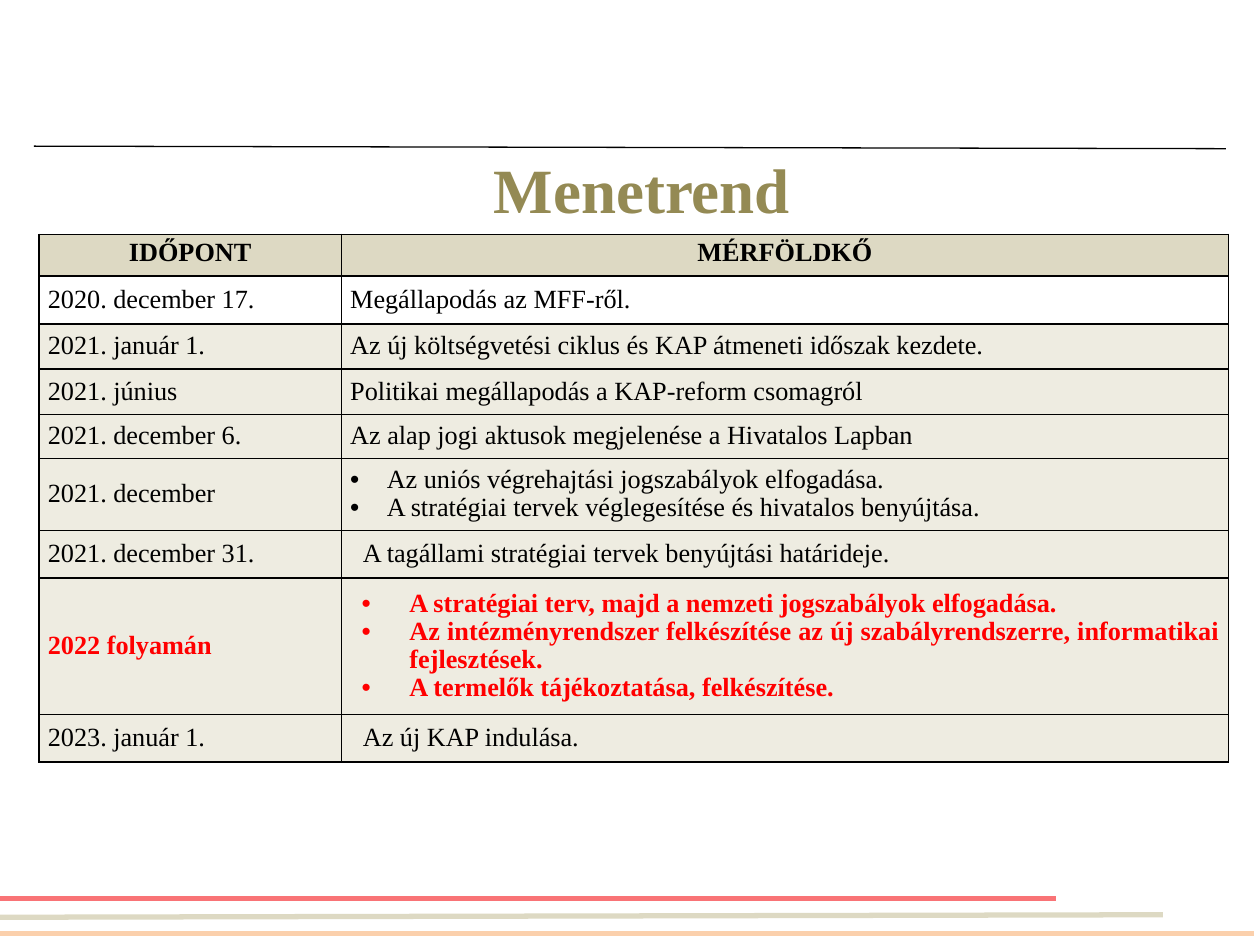
from pptx import Presentation
from pptx.dml.color import RGBColor
from pptx.enum.shapes import MSO_CONNECTOR
from pptx.enum.text import MSO_ANCHOR, PP_ALIGN
from pptx.oxml.ns import qn
from pptx.util import Inches, Pt
from lxml.etree import SubElement

THEME = {
    "font": "Times New Roman", "title_size": 36, "text_size": 15,
    "title": "948A54", "text": "000000", "accent": "FF0000",
    "header_fill": "DDD9C3", "row_fill": "EEECE1", "plain_fill": "FFFFFF",
    "border": "000000", "border_width": 1,
}

TITLE = "Menetrend"
HEADER = ("IDŐPONT", "MÉRFÖLDKŐ")

# Paragraph styles: left indent, first-line indent, bullet
STYLES = {
    "plain": (0, 0, False),
    "indented": (0.1, 0, False),
    "bullets": (0.29, -0.29, True),
    "deep bullets": (0.47, -0.38, True),
}

# Date, milestones, milestone style, row height
MILESTONES = [
    ("2020. december 17.", ["Megállapodás az MFF-ről."], "plain", 0.38),
    ("2021. január 1.", ["Az új költségvetési ciklus és KAP átmeneti időszak kezdete."], "plain", 0.36),
    ("2021. június", ["Politikai megállapodás a KAP-reform csomagról"], "plain", 0.36),
    ("2021. december 6.", ["Az alap jogi aktusok megjelenése a Hivatalos Lapban"], "plain", 0.35),
    ("2021. december", ["Az uniós végrehajtási jogszabályok elfogadása.",
                        "A stratégiai tervek véglegesítése és hivatalos benyújtása."], "bullets", 0.57),
    ("2021. december 31.", ["A tagállami stratégiai tervek benyújtási határideje."], "indented", 0.38),
    ("2022 folyamán", ["A stratégiai terv, majd a nemzeti jogszabályok elfogadása.",
                       "Az intézményrendszer felkészítése az új szabályrendszerre, informatikai fejlesztések.",
                       "A termelők tájékoztatása, felkészítése."], "deep bullets", 1.08),
    ("2023. január 1.", ["Az új KAP indulása."], "indented", 0.38),
]
HIGHLIGHT = "2022 folyamán"
LEFT_ALIGNED = ("2021. június", "2021. december")
HEADER_HEIGHT = 0.33
COLUMNS = (2.4, 7.04)

# Start, end, colour, width in points
RULES = [
    ((0, 7.13), (8.38, 7.13), "F97376", 3),
    ((0, 7.41), (9.95, 7.41), "FBD0AC", 3),
    ((0, 7.28), (9.23, 7.26), "DDD9C3", 3),
    ((0.27, 1.16), (9.73, 1.18), "000000", 0.75),
]


def add_rule(slide, start, end, color, width):
    line = slide.shapes.add_connector(
        MSO_CONNECTOR.STRAIGHT, *(Inches(v) for v in start + end))
    line.line.color.rgb = RGBColor.from_string(color)
    line.line.width = Pt(width)
    SubElement(line._element.spPr, qn("a:effectLst"))


def set_margins(target, left, top, right, bottom):
    target.margin_left, target.margin_top = Inches(left), Inches(top)
    target.margin_right, target.margin_bottom = Inches(right), Inches(bottom)


def add_run(p, text, size, color, bold):
    r = p.add_run()
    r.text = text
    r.font.name, r.font.size, r.font.bold = THEME["font"], Pt(size), bold
    r.font.color.rgb = RGBColor.from_string(color)


def set_borders(cell):
    tcPr = cell._tc.get_or_add_tcPr()
    for i, side in enumerate(("lnL", "lnR", "lnT", "lnB")):
        ln = tcPr.makeelement(qn(f"a:{side}"), {"w": str(Pt(THEME["border_width"]))})
        tcPr.insert(i, ln)
        SubElement(SubElement(ln, qn("a:solidFill")), qn("a:srgbClr"), val=THEME["border"])


def fill_cell(cell, texts, fill, style="plain", align=PP_ALIGN.JUSTIFY,
              color=THEME["text"], bold=False, anchor=MSO_ANCHOR.MIDDLE):
    cell.fill.solid()
    cell.fill.fore_color.rgb = RGBColor.from_string(fill)
    set_borders(cell)
    set_margins(cell, 0.07, 0.04, 0.07, 0.04)
    cell.vertical_anchor = anchor
    indent, first, bullet = STYLES[style]
    tf = cell.text_frame
    for i, text in enumerate(texts):
        p = tf.add_paragraph() if i else tf.paragraphs[0]
        p.alignment = align
        p.line_spacing = 0.96
        pPr = p._p.get_or_add_pPr()
        pPr.set("marL", str(Inches(indent)))
        pPr.set("indent", str(Inches(first)))
        if bullet:
            SubElement(pPr, qn("a:buFont"), typeface="Arial")
            SubElement(pPr, qn("a:buChar"), char="•")
        add_run(p, text, THEME["text_size"], color, bold)


prs = Presentation()
prs.slide_width, prs.slide_height = Inches(10), Inches(7.5)
slide = prs.slides.add_slide(prs.slide_layouts[5])

# Decorative rules
for rule in RULES:
    add_rule(slide, *rule)

# Title
title = slide.shapes.title
title.left, title.top = Inches(0.75), Inches(1.15)
title.width, title.height = Inches(8.68), Inches(0.69)
tf = title.text_frame
tf.word_wrap = True
tf.vertical_anchor = MSO_ANCHOR.MIDDLE
set_margins(tf, 0.01, 0.07, 0, 0.07)
p = tf.paragraphs[0]
p.alignment = PP_ALIGN.CENTER
add_run(p, TITLE, THEME["title_size"], THEME["title"], True)

# Timetable
heights = [HEADER_HEIGHT] + [row[-1] for row in MILESTONES]
table = slide.shapes.add_table(
    len(heights), len(COLUMNS), Inches(0.31), Inches(1.86),
    Inches(sum(COLUMNS)), Inches(sum(heights))).table
for column, width in zip(table.columns, COLUMNS):
    column.width = Inches(width)
for row, height in zip(table.rows, heights):
    row.height = Inches(height)

for c, text in enumerate(HEADER):
    fill_cell(table.cell(0, c), [text], THEME["header_fill"], align=PP_ALIGN.CENTER,
              bold=True, anchor=MSO_ANCHOR.TOP)

for r, (date, texts, style, _) in enumerate(MILESTONES, start=1):
    marked = date == HIGHLIGHT
    look = {
        "fill": THEME["plain_fill" if r == 1 else "row_fill"],
        "align": PP_ALIGN.LEFT if date in LEFT_ALIGNED else PP_ALIGN.JUSTIFY,
        "color": THEME["accent" if marked else "text"],
        "bold": marked,
    }
    fill_cell(table.cell(r, 0), [date], **look)
    fill_cell(table.cell(r, 1), texts, style=style, **look)

prs.save("out.pptx")
